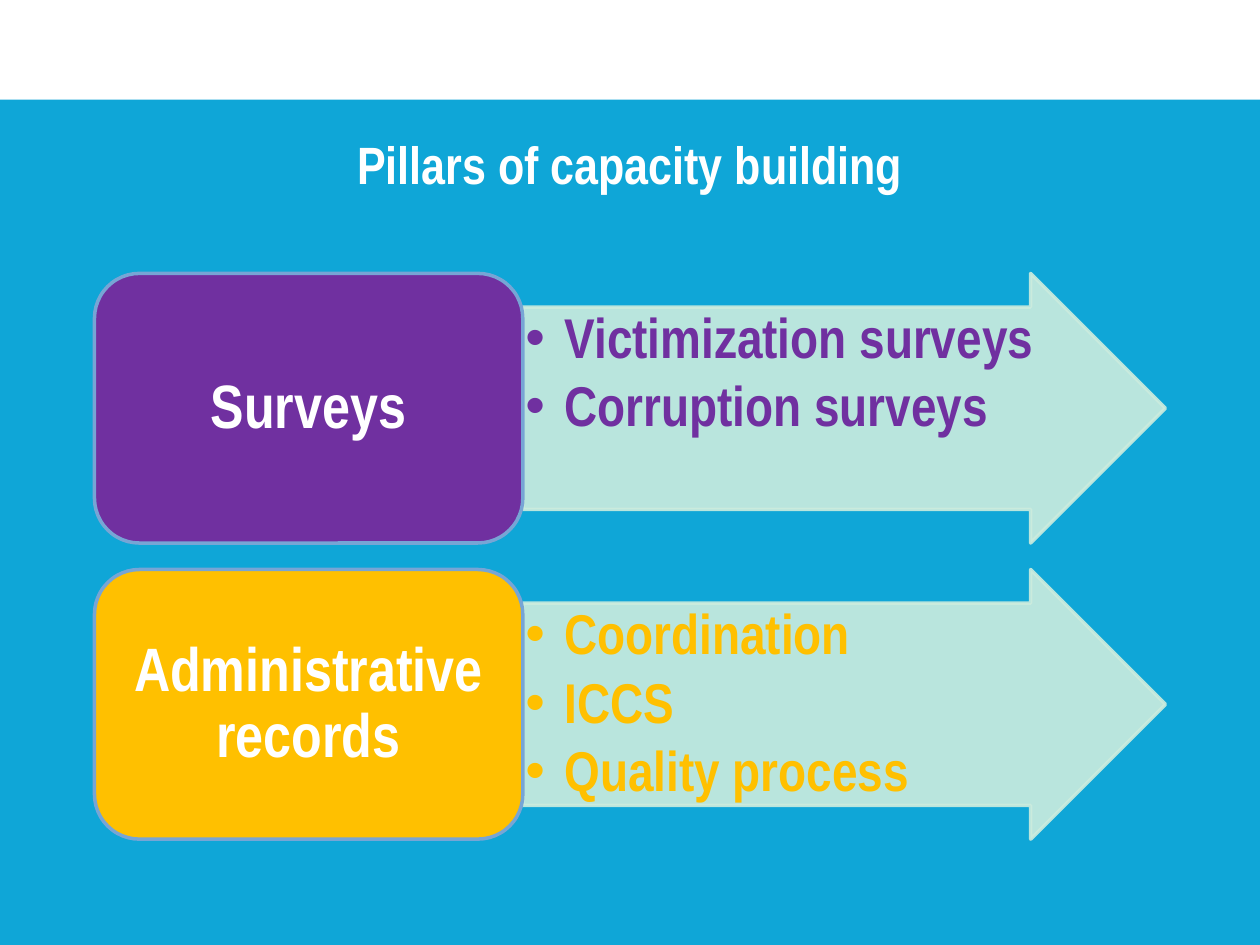
from lxml import etree
from pptx import Presentation
from pptx.dml.color import RGBColor
from pptx.enum.shapes import MSO_SHAPE
from pptx.enum.text import MSO_ANCHOR, MSO_AUTO_SIZE, PP_ALIGN
from pptx.oxml.ns import qn
from pptx.util import Inches, Pt

RECTANGLE = MSO_SHAPE.RECTANGLE
ROUNDED = MSO_SHAPE.ROUNDED_RECTANGLE
ARROW = MSO_SHAPE.RIGHT_ARROW
MIDDLE, TOP = MSO_ANCHOR.MIDDLE, MSO_ANCHOR.TOP
CENTER, LEFT = PP_ALIGN.CENTER, PP_ALIGN.LEFT
NO_AUTOFIT = MSO_AUTO_SIZE.NONE

WHITE, SKY, MINT, EDGE = "FFFFFF", "0FA6D7", "CCECDE", "77A5D5"
PILLARS = [
    ("Surveys", "7030A0", ["Victimization surveys", "Corruption surveys"]),
    ("Administrative records", "FFC000", ["Coordination", "ICCS", "Quality process"]),
]


def rgb(color):
    """Turn a hex string into a colour."""
    return RGBColor.from_string(color)


def set_alpha(fill_parent, percent):
    """Make the solid fill directly under an element partly transparent."""
    color = fill_parent.find(qn("a:solidFill"))[0]
    etree.SubElement(color, qn("a:alpha")).set("val", str(percent * 1000))


def add_box(slide, preset, box, fill, edge=None):
    """Add a flat preset shape in box, given as inches."""
    shape = slide.shapes.add_shape(preset, *map(Inches, box))
    shape.shadow.inherit = False
    shape.fill.solid()
    shape.fill.fore_color.rgb = rgb(fill)
    if edge:
        shape.line.color.rgb = rgb(edge)
        shape.line.width = Pt(2)
    else:
        shape.line.fill.background()
    return shape


def write(shape, lines, size, color, frame_format, paragraph_format):
    """Write bold lines into a shape and return their paragraphs."""
    frame = shape.text_frame
    frame.text = "\n".join(lines)
    frame_format = {"word_wrap": True, "auto_size": NO_AUTOFIT, **frame_format}
    for name, value in frame_format.items():
        setattr(frame, name, value)
    font_format = {"name": "Arial Narrow", "size": Pt(size), "bold": True}
    for paragraph in frame.paragraphs:
        for name, value in paragraph_format.items():
            setattr(paragraph, name, value)
        for run in paragraph.runs:
            for name, value in font_format.items():
                setattr(run.font, name, value)
            run.font.color.rgb = rgb(color)
    return frame.paragraphs


def margins(horizontal, vertical):
    """Give the frame margins as format values."""
    return {
        "margin_left": Inches(horizontal), "margin_right": Inches(horizontal),
        "margin_top": Inches(vertical), "margin_bottom": Inches(vertical),
    }


def place(placeholder, box):
    """Move a placeholder to box, given as inches."""
    for name, value in zip(("left", "top", "width", "height"), box):
        setattr(placeholder, name, Inches(value))


def add_heading(slide, box):
    """Place the slide title below the white band."""
    add_box(slide, RECTANGLE, (0, 0, 10, 0.79), WHITE)
    title = slide.shapes.title
    place(title, box)
    slide.shapes.element.append(title.element)
    write(title, ["Pillars of capacity building"], 30, WHITE,
          {"vertical_anchor": MIDDLE}, {"alignment": CENTER})


def add_pillar(slide, box, pillar, topics_body):
    """Draw one pillar: a named block and an arrow that lists its topics."""
    name, color, topics = pillar
    left, top, width, height = box
    block_width = width * 0.4
    arrow_left, arrow_width = left + block_width, width * 0.6

    arrow = add_box(slide, ARROW, (arrow_left, top, arrow_width, height), MINT, MINT)
    arrow.adjustments[0], arrow.adjustments[1] = 0.75, 0.5
    properties = arrow.element.spPr
    set_alpha(properties, 90)
    set_alpha(properties.find(qn("a:ln")), 90)

    place(topics_body, (arrow_left, top + height / 8,
                        arrow_width - height * 3 / 8, height * 0.75))
    slide.shapes.element.append(topics_body.element)
    paragraphs = write(
        topics_body, topics, 32, color,
        {"vertical_anchor": TOP, **margins(0.02, 0.02)},
        {"alignment": LEFT, "line_spacing": 0.9,
         "space_before": Pt(0), "space_after": Pt(4.8)})
    for paragraph in paragraphs:
        indents = paragraph._p.get_or_add_pPr()
        indents.set("marL", str(Inches(0.31)))
        indents.set("indent", str(-Inches(0.31)))

    block = add_box(slide, ROUNDED, (left, top, block_width, height), color, EDGE)
    write(block, [name], 35, WHITE,
          {"vertical_anchor": MIDDLE, **margins(0.1, 0.07)},
          {"alignment": CENTER, "line_spacing": 0.9})


def main():
    """Build and save the slide."""
    presentation = Presentation()
    presentation.slide_width, presentation.slide_height = Inches(10), Inches(7.5)
    slide = presentation.slides.add_slide(presentation.slide_layouts[3])
    slide.background.fill.solid()
    slide.background.fill.fore_color.rgb = rgb(SKY)
    bodies = list(slide.placeholders)[1:]
    add_heading(slide, (0.75, 0.67, 8.5, 1.25))
    for index, (pillar, body) in enumerate(zip(PILLARS, bodies)):
        add_pillar(slide, (0.75, 2.17 + index * 2.35, 8.5, 2.14), pillar, body)
    presentation.save("out.pptx")


if __name__ == "__main__":
    main()
